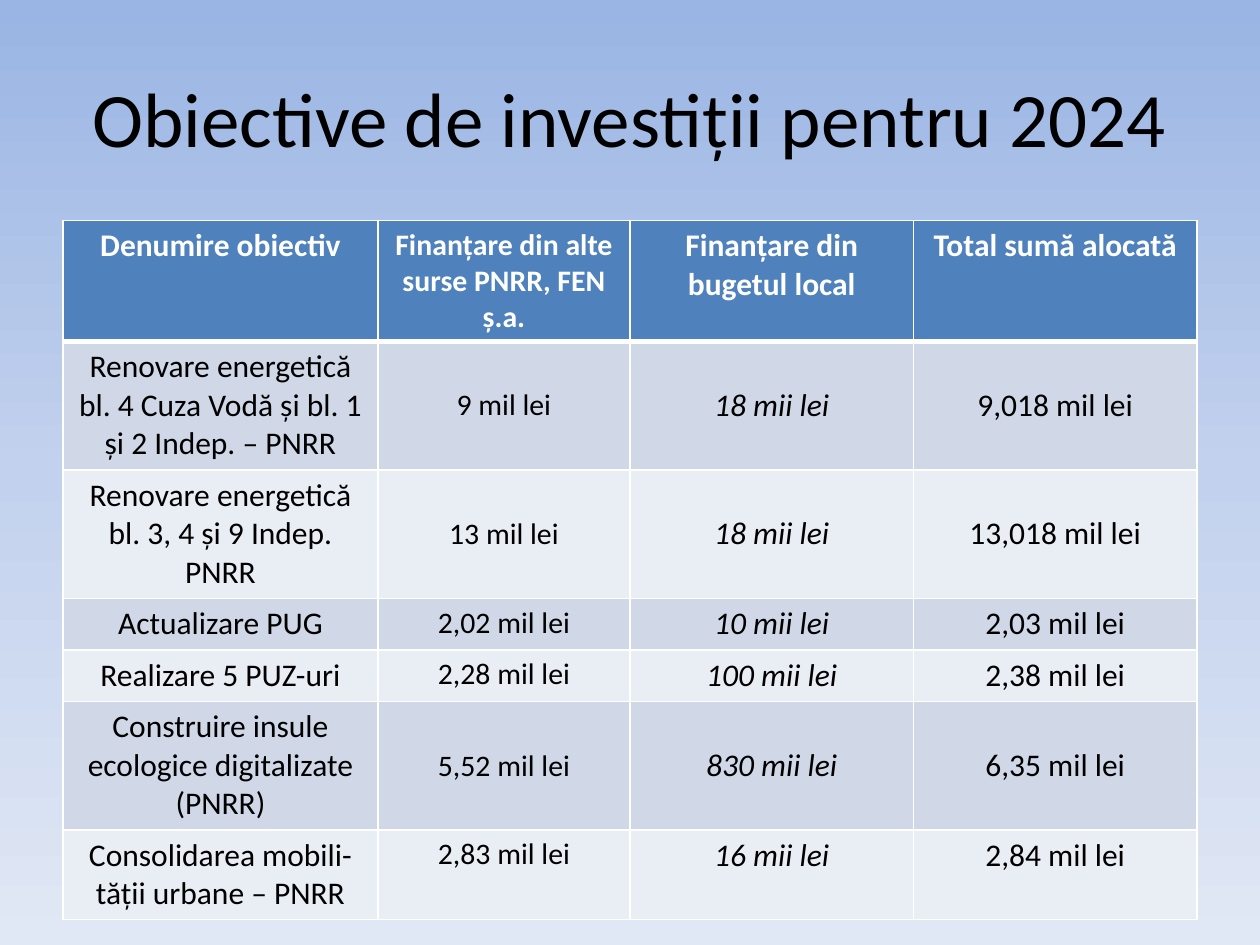
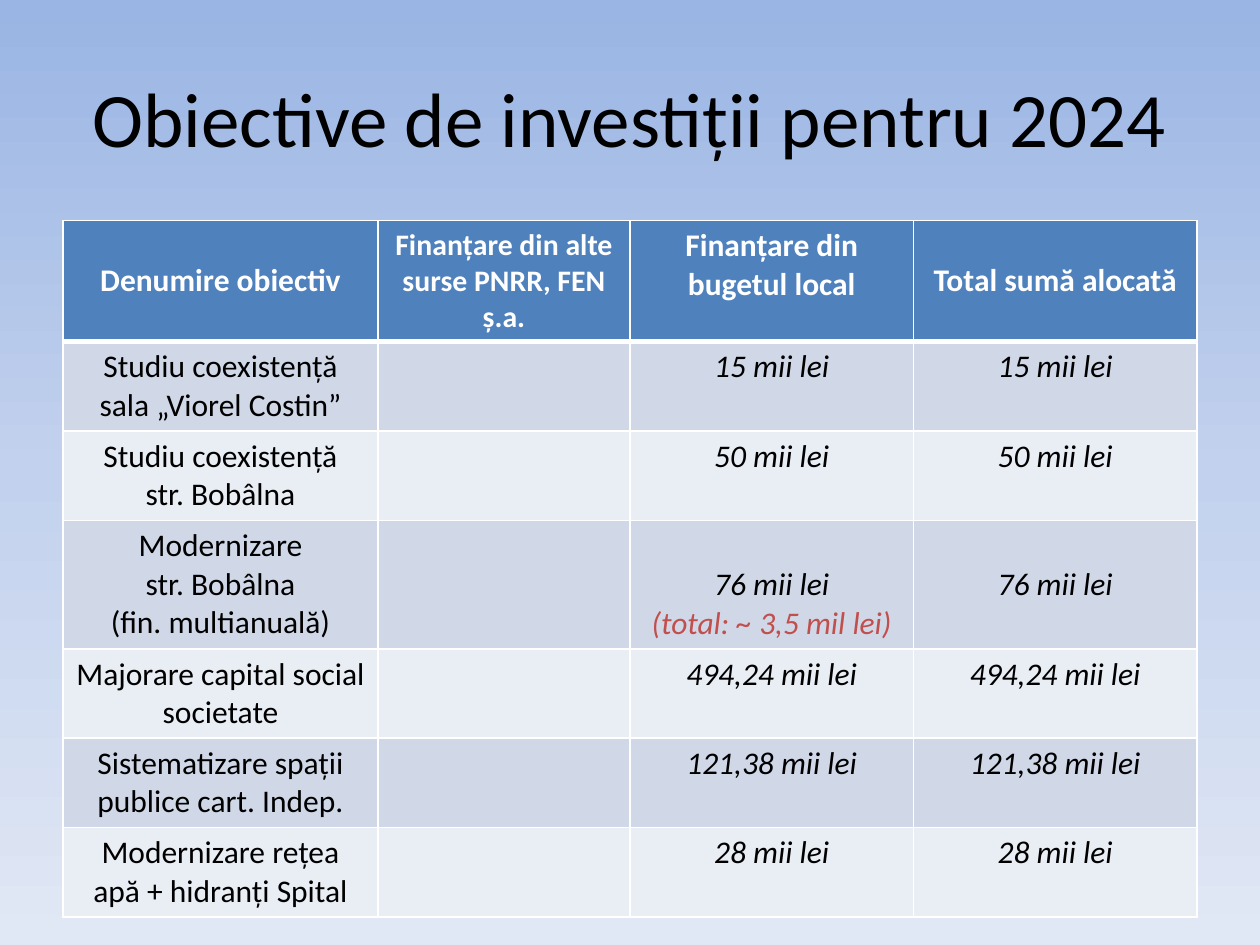
from dataclasses import dataclass

from copy import deepcopy
from lxml.etree import SubElement
from pptx import Presentation
from pptx.dml.color import RGBColor
from pptx.enum.text import MSO_ANCHOR as Anchor, PP_ALIGN as Align
from pptx.oxml.ns import qn
from pptx.util import Inches, Pt


@dataclass(frozen=True)
class Theme:
    font: str = "Calibri"
    title_size: int = 44
    text_size: int = 18
    source_size: int = 17
    text: str = "000000"
    light: str = "FFFFFF"
    accent: str = "C0504D"
    header: str = "4F81BD"
    bands: tuple = ("D0D8E8", "E9EDF4")
    background: tuple = ((0, "9AB5E4"), (0.5, "C2D1ED"), (1, "E1E8F5"))
    border: int = 1
    header_border: int = 3


THEME = Theme()
MARGIN = 0.05  # share of the slide width
COLUMN_SHARES = (10 / 36, 8 / 36, 9 / 36, 9 / 36)
HEADER_HEIGHT = 0.96
ROW_HEIGHTS = {1: 0.41, 2: 0.71, 3: 1.02}  # inches, by lines of text
SOURCE_COLUMN = 1

TITLE = "Obiective de investiții pentru 2024"
HEADERS = (
    "Denumire obiectiv",
    "Finanțare din alte surse PNRR, FEN ș.a.",
    "Finanțare din bugetul local",
    "Total sumă alocată",
)

# Each row: lines of text, objective, other sources, local budget, total
FUNDED_ROWS = (
    (3, "Renovare energetică bl. 4 Cuza Vodă și bl. 1 și 2 Indep. – PNRR",
     "9 mil lei", "18 mii lei", "9,018 mil lei"),
    (3, "Renovare energetică bl. 3, 4 și 9 Indep. PNRR",
     "13 mil lei", "18 mii lei", "13,018 mil lei"),
    (1, "Actualizare PUG", "2,02 mil lei", "10 mii lei", "2,03 mil lei"),
    (1, "Realizare 5 PUZ-uri", "2,28 mil lei", "100 mii lei", "2,38 mil lei"),
    (3, "Construire insule ecologice digitalizate (PNRR)",
     "5,52 mil lei", "830 mii lei", "6,35 mil lei"),
    (2, "Consolidarea mobili-tății urbane – PNRR",
     "2,83 mil lei", "16 mii lei", "2,84 mil lei"),
)
LOCAL_ROWS = (
    (2, "Studiu coexistență sala „Viorel Costin”", "", "15 mii lei", "15 mii lei"),
    (2, "Studiu coexistență\nstr. Bobâlna", "", "50 mii lei", "50 mii lei"),
    (3, "Modernizare\nstr. Bobâlna\n(fin. multianuală)", "",
     "76 mii lei\n(total: ~ 3,5 mil lei)", "76 mii lei"),
    (2, "Majorare capital social societate", "", "494,24 mii lei", "494,24 mii lei"),
    (2, "Sistematizare spații publice cart. Indep.", "",
     "121,38 mii lei", "121,38 mii lei"),
    (2, "Modernizare rețea apă + hidranți Spital", "", "28 mii lei", "28 mii lei"),
)


def color(value):
    return RGBColor.from_string(value)


def style_paragraph(paragraph, size, value, bold=False, italic=False):
    paragraph.alignment = Align.CENTER
    font = paragraph.font
    font.name, font.size = THEME.font, Pt(size)
    font.bold, font.italic = bold, italic
    font.color.rgb = color(value)


def set_background(master):
    """Give every slide the same vertical three-stop gradient."""
    fill = master.background.fill
    fill.gradient()
    fill.gradient_angle = 270
    stop_list = next(master.element.iter(qn("a:gsLst")))
    stop_list.append(deepcopy(stop_list[-1]))
    for stop, (position, value) in zip(fill.gradient_stops, THEME.background):
        stop.position = position
        stop.color.rgb = color(value)


def set_borders(cell, top, bottom):
    properties = cell._tc.get_or_add_tcPr()
    widths = (("L", THEME.border), ("R", THEME.border), ("T", top), ("B", bottom))
    for index, (side, width) in enumerate(widths):
        line = SubElement(properties, qn(f"a:ln{side}"), w=str(Pt(width)))
        SubElement(SubElement(line, qn("a:solidFill")), qn("a:srgbClr"), val=THEME.light)
        properties.insert(index, line)


def fill_cell(cell, text, background, anchor):
    cell.text = text
    cell.vertical_anchor = anchor
    cell.fill.solid()
    cell.fill.fore_color.rgb = color(background)
    return cell.text_frame.paragraphs


def column_size(column):
    return THEME.source_size if column == SOURCE_COLUMN else THEME.text_size


def value_anchor(column, lines, text):
    """Names start at the top; amounts sit in the middle of tall rows."""
    if column == 0 or lines < 3:
        return Anchor.TOP
    return Anchor.BOTTOM if "\n" in text else Anchor.MIDDLE


def add_title(slide, width, height):
    box = slide.shapes.add_textbox(
        int(MARGIN * width), int(0.04 * height),
        int((1 - 2 * MARGIN) * width), int(height / 6))
    frame = box.text_frame
    frame.word_wrap = True
    frame.vertical_anchor = Anchor.MIDDLE
    frame.text = TITLE
    style_paragraph(frame.paragraphs[0], THEME.title_size, THEME.text)


def add_header(table, middle_columns):
    for column, text in enumerate(HEADERS):
        cell = table.cell(0, column)
        anchor = Anchor.MIDDLE if column in middle_columns else Anchor.TOP
        for paragraph in fill_cell(cell, text, THEME.header, anchor):
            style_paragraph(paragraph, column_size(column), THEME.light, bold=True)
        set_borders(cell, THEME.border, THEME.header_border)


def add_row(table, row, lines, texts, italic_columns):
    for column, text in enumerate(texts):
        cell = table.cell(row, column)
        paragraphs = fill_cell(cell, text, THEME.bands[(row - 1) % 2],
                               value_anchor(column, lines, text))
        for index, paragraph in enumerate(paragraphs):
            is_note = column > 0 and index > 0
            style_paragraph(paragraph, column_size(column),
                            THEME.accent if is_note else THEME.text,
                            italic=column in italic_columns)
        set_borders(cell, THEME.header_border if row == 1 else THEME.border,
                    THEME.border)


def add_budget_table(slide, width, height, rows, italic_columns, middle_headers):
    heights = [HEADER_HEIGHT] + [ROW_HEIGHTS[lines] for lines, *_ in rows]
    table_width = (1 - 2 * MARGIN) * width
    table = slide.shapes.add_table(
        len(heights), len(HEADERS), int(MARGIN * width), int(height * 7 / 30),
        int(table_width), Inches(sum(heights))).table
    for column, share in zip(table.columns, COLUMN_SHARES):
        column.width = int(share * table_width)
    for row, row_height in zip(table.rows, heights):
        row.height = Inches(row_height)

    add_header(table, middle_headers)
    for row, (lines, *texts) in enumerate(rows, start=1):
        add_row(table, row, lines, texts, italic_columns)


def main():
    presentation = Presentation()
    presentation.slide_width, presentation.slide_height = Inches(10), Inches(7.5)
    width, height = presentation.slide_width, presentation.slide_height
    set_background(presentation.slide_master)

    # One slide per table: rows, italic columns, vertically centred headers
    for rows, italic_columns, middle_headers in (
        (FUNDED_ROWS, (2,), ()),
        (LOCAL_ROWS, (2, 3), (0, 3)),
    ):
        slide = presentation.slides.add_slide(presentation.slide_layouts[6])
        add_title(slide, width, height)
        add_budget_table(slide, width, height, rows, italic_columns, middle_headers)

    presentation.save("out.pptx")


if __name__ == "__main__":
    main()
